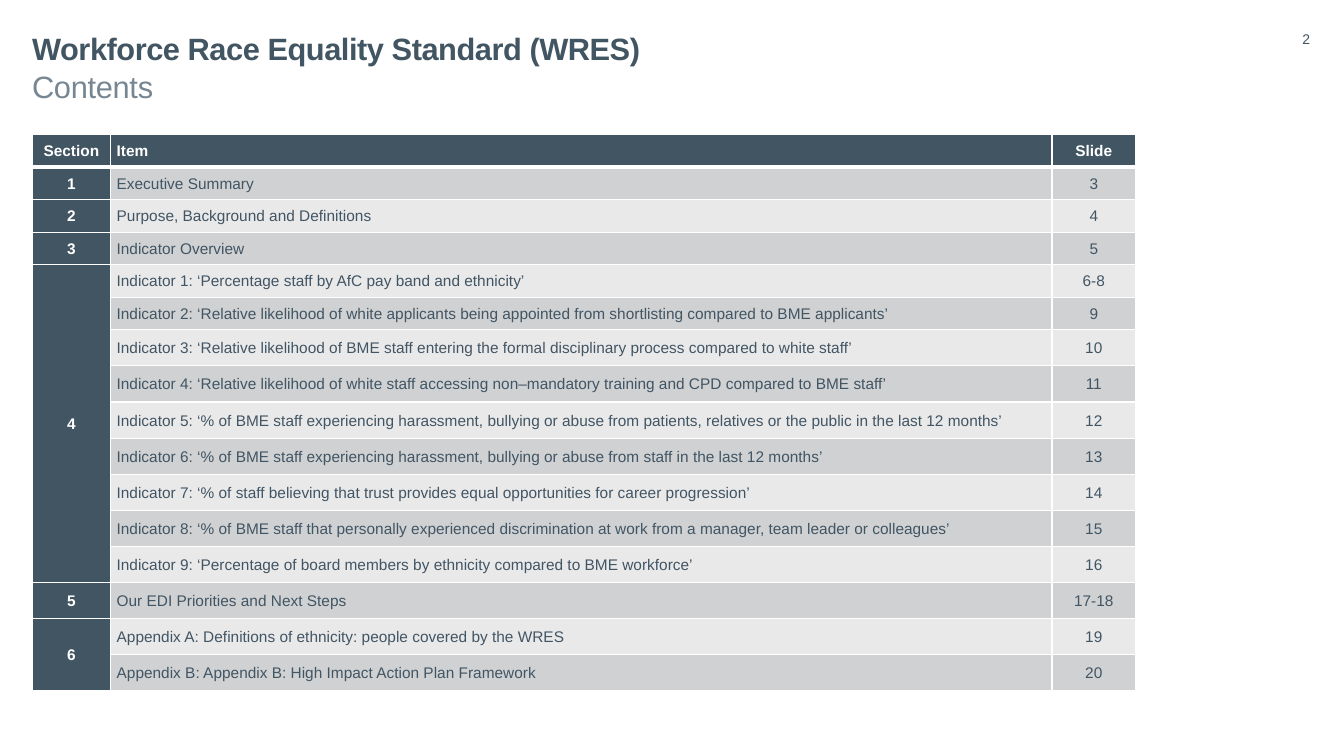
"""Build the contents slide of the Workforce Race Equality Standard deck."""
from dataclasses import dataclass

from lxml import etree
from pptx import Presentation
from pptx.dml.color import RGBColor
from pptx.enum.text import MSO_ANCHOR, MSO_AUTO_SIZE, PP_ALIGN
from pptx.oxml.ns import qn
from pptx.util import Cm, Pt

LEFT, CENTER, RIGHT = PP_ALIGN.LEFT, PP_ALIGN.CENTER, PP_ALIGN.RIGHT
TOP, MIDDLE = MSO_ANCHOR.TOP, MSO_ANCHOR.MIDDLE
NO_FIT = MSO_AUTO_SIZE.NONE


@dataclass(frozen=True)
class Theme:
    font: str = "Arial"
    slate: str = "425563"
    grey: str = "768692"
    white: str = "FFFFFF"
    bands: tuple[str, str] = ("E9E9EA", "CFD1D3")
    heading_size: float = 22
    table_size: float = 11
    number_size: float = 10
    rule: float = 1
    header_rule: float = 3


@dataclass(frozen=True)
class Style:
    size: float
    color: str
    bold: bool = False
    tracking: float = 0


@dataclass(frozen=True)
class Label:
    text: str
    left: float
    top: float
    width: float
    height: float
    style: Style
    align: PP_ALIGN = LEFT


@dataclass(frozen=True)
class Section:
    number: str
    items: tuple[tuple[str, str], ...]


THEME = Theme()
HEADER_STYLE = Style(THEME.table_size, THEME.white, bold=True)
ITEM_STYLE = Style(THEME.table_size, THEME.slate)

TITLE = Label("Workforce Race Equality Standard (WRES)", 0.81, 0.76, 19.08, 0.94,
              Style(THEME.heading_size, THEME.slate, bold=True, tracking=-0.3))
LABELS = (
    Label("Contents", 0.81, 1.7, 19.08, 1.04,
          Style(THEME.heading_size, THEME.grey, tracking=-0.2)),
    Label("2", 32.18, 0.76, 0.84, 0.64, Style(THEME.number_size, THEME.slate), RIGHT),
)

HEADERS = ("Section", "Item", "Slide")
ALIGNMENTS = (CENTER, LEFT, CENTER)
COLUMN_WIDTHS = (1.98, 23.72, 2.11)
ROW_HEIGHTS = (0.82,) * 6 + (0.91,) * 10
SECTIONS = (
    Section("1", (("Executive Summary", "3"),)),
    Section("2", (("Purpose, Background and Definitions", "4"),)),
    Section("3", (("Indicator Overview", "5"),)),
    Section("4", (
        ("Indicator 1: ‘Percentage staff by AfC pay band and ethnicity’", "6-8"),
        ("Indicator 2: ‘Relative likelihood of white applicants being appointed "
         "from shortlisting compared to BME applicants’", "9"),
        ("Indicator 3: ‘Relative likelihood of BME staff entering the formal "
         "disciplinary process compared to white staff’", "10"),
        ("Indicator 4: ‘Relative likelihood of white staff accessing "
         "non–mandatory training and CPD compared to BME staff’", "11"),
        ("Indicator 5: ‘% of BME staff experiencing harassment, bullying or abuse "
         "from patients, relatives or the public in the last 12 months’", "12"),
        ("Indicator 6: ‘% of BME staff experiencing harassment, bullying or abuse "
         "from staff in the last 12 months’", "13"),
        ("Indicator 7: ‘% of staff believing that trust provides equal "
         "opportunities for career progression’", "14"),
        ("Indicator 8: ‘% of BME staff that personally experienced discrimination "
         "at work from a manager, team leader or colleagues’", "15"),
        ("Indicator 9: ‘Percentage of board members by ethnicity compared to "
         "BME workforce’", "16"),
    )),
    Section("5", (("Our EDI Priorities and Next Steps", "17-18"),)),
    Section("6", (
        ("Appendix A: Definitions of ethnicity: people covered by the WRES", "19"),
        ("Appendix B: Appendix B: High Impact Action Plan Framework", "20"),
    )),
)


def add_span(para, text: str, style: Style) -> None:
    span = para.add_run()
    span.text = text
    span.font.name = THEME.font
    span.font.size = Pt(style.size)
    span.font.bold = style.bold
    span.font.color.rgb = RGBColor.from_string(style.color)
    if style.tracking:
        span._r.get_or_add_rPr().set("spc", str(round(style.tracking * 100)))


def fill_label(box, label: Label) -> None:
    box.left, box.top = Cm(label.left), Cm(label.top)
    box.width, box.height = Cm(label.width), Cm(label.height)
    frame = box.text_frame
    frame.margin_left = frame.margin_right = frame.margin_top = frame.margin_bottom = 0
    frame.word_wrap = True
    frame.auto_size = NO_FIT
    frame.vertical_anchor = TOP
    para = frame.paragraphs[0]
    para.alignment = label.align
    add_span(para, label.text, label.style)


def add_borders(cell, row: int) -> None:
    widths = {
        "a:lnL": THEME.rule,
        "a:lnR": THEME.rule,
        "a:lnT": THEME.header_rule if row == 1 else THEME.rule,
        "a:lnB": THEME.header_rule if row == 0 else THEME.rule,
    }
    properties = cell._tc.get_or_add_tcPr()
    for tag, width in widths.items():
        line = etree.SubElement(properties, qn(tag), w=str(Pt(width)))
        fill = etree.SubElement(line, qn("a:solidFill"))
        etree.SubElement(fill, qn("a:srgbClr"), val=THEME.white)


def format_cell(cell, row: int, column: int) -> None:
    is_header = row == 0 or column == 0
    add_borders(cell, row)
    cell.fill.solid()
    color = THEME.slate if is_header else THEME.bands[row % 2]
    cell.fill.fore_color.rgb = RGBColor.from_string(color)
    cell.margin_left = cell.margin_right = Cm(0.15)
    cell.margin_top = cell.margin_bottom = 0
    cell.vertical_anchor = MIDDLE


def write_cell(table, row: int, column: int, text: str) -> None:
    para = table.cell(row, column).text_frame.paragraphs[0]
    para.alignment = ALIGNMENTS[column]
    para.line_spacing = 1.07
    para.space_after = Pt(8)
    add_span(para, text, HEADER_STYLE if row == 0 or column == 0 else ITEM_STYLE)


def add_contents_table(page) -> None:
    table = page.shapes.add_table(
        len(ROW_HEIGHTS), len(COLUMN_WIDTHS), Cm(0.81), Cm(3.39),
        Cm(sum(COLUMN_WIDTHS)), Cm(sum(ROW_HEIGHTS))).table
    for column, width in enumerate(COLUMN_WIDTHS):
        table.columns[column].width = Cm(width)
        write_cell(table, 0, column, HEADERS[column])
    for row, height in enumerate(ROW_HEIGHTS):
        table.rows[row].height = Cm(height)
        for column in range(len(COLUMN_WIDTHS)):
            format_cell(table.cell(row, column), row, column)
    row = 1
    for section in SECTIONS:
        write_cell(table, row, 0, section.number)
        last = row + len(section.items) - 1
        if last > row:
            table.cell(row, 0).merge(table.cell(last, 0))
        for item, slide_number in section.items:
            write_cell(table, row, 1, item)
            write_cell(table, row, 2, slide_number)
            row += 1


def main() -> None:
    deck = Presentation()
    deck.slide_width, deck.slide_height = Cm(33.87), Cm(19.05)
    page = deck.slides.add_slide(deck.slide_layouts.get_by_name("Title Only"))
    fill_label(page.shapes.title, TITLE)
    add_contents_table(page)
    for label in LABELS:
        fill_label(page.shapes.add_textbox(0, 0, 0, 0), label)
    deck.save("out.pptx")


if __name__ == "__main__":
    main()
